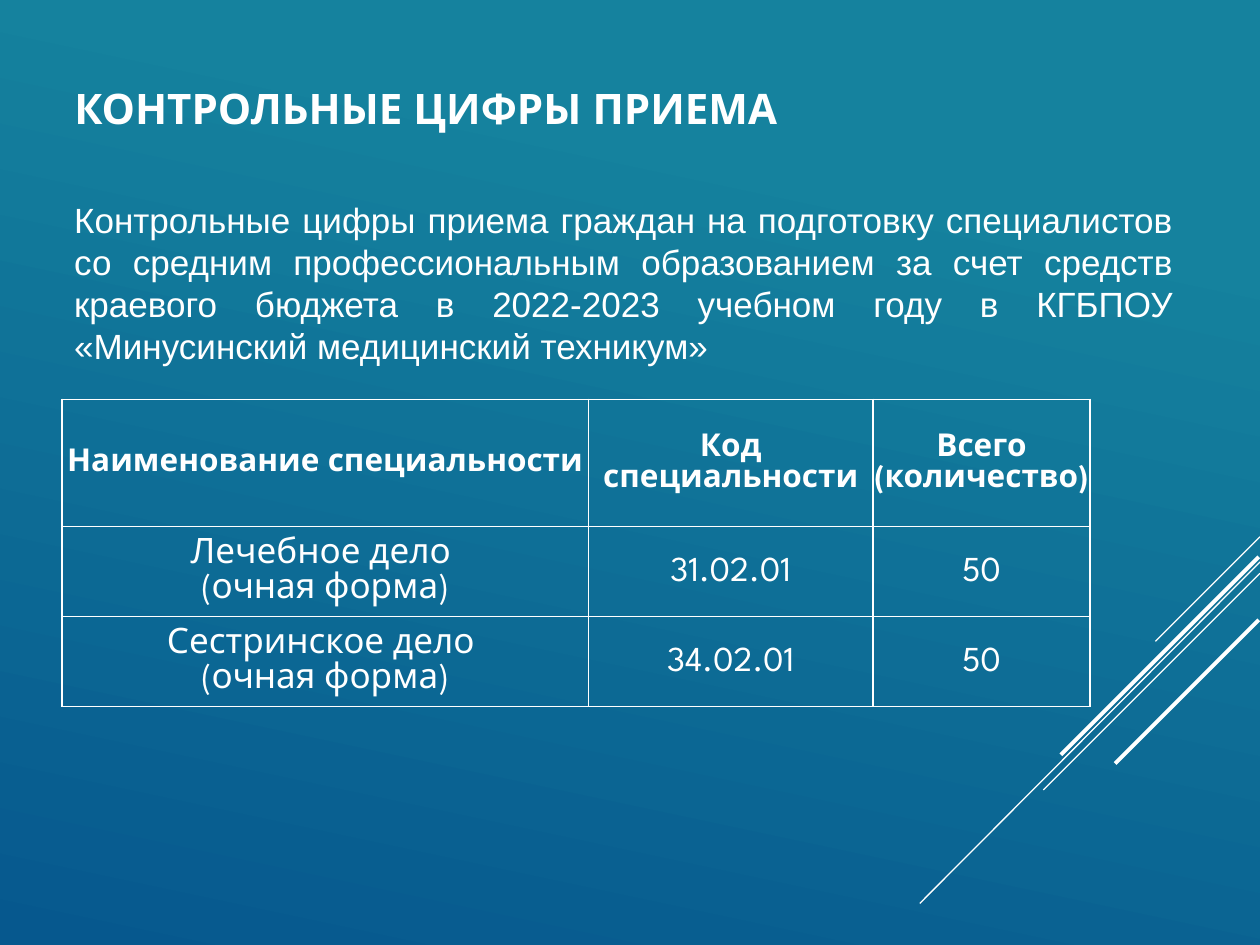
from lxml.etree import SubElement
from pptx import Presentation
from pptx.dml.color import RGBColor
from pptx.enum.shapes import MSO_CONNECTOR
from pptx.enum.text import MSO_ANCHOR, MSO_AUTO_SIZE, PP_ALIGN
from pptx.oxml.ns import qn
from pptx.util import Inches, Pt


def color(value):
    return RGBColor.from_string(value)


class SlideBuilder:
    ink = "FFFFFF"
    heading_font = "League Spartan"
    body_font = "Arial"

    def __init__(self, page):
        self.page = page

    def background(self, stops, angle):
        fill = self.page.background.fill
        fill.gradient()
        fill.gradient_angle = 360 - angle
        for stop, (position, value) in zip(fill.gradient_stops, stops):
            stop.position = position
            stop.color.rgb = color(value)

    def format_runs(self, para, name, size, bold=False):
        for run in para.runs:
            run.font.name = name
            run.font.size = Pt(size)
            run.font.bold = bold
            run.font.color.rgb = color(self.ink)

    def title(self, text, left, top, width, height):
        box = self.page.shapes.title
        box.left, box.top = Inches(left), Inches(top)
        box.width, box.height = Inches(width), Inches(height)
        frame = box.text_frame
        frame.text = text
        frame.auto_size = MSO_AUTO_SIZE.NONE
        frame.vertical_anchor = MSO_ANCHOR.MIDDLE
        para = frame.paragraphs[0]
        para.alignment = PP_ALIGN.LEFT
        self.format_runs(para, self.heading_font, 24, True)

    def text(self, text, left, top, width, height):
        box = self.page.shapes.add_textbox(
            Inches(left), Inches(top), Inches(width), Inches(height))
        frame = box.text_frame
        frame.word_wrap = True
        frame.auto_size = MSO_AUTO_SIZE.SHAPE_TO_FIT_TEXT
        frame.text = text
        para = frame.paragraphs[0]
        para.alignment = PP_ALIGN.JUSTIFY
        self.format_runs(para, self.body_font, 20)

    def line(self, start, end, weight):
        points = [Inches(value) for value in (*start, *end)]
        connector = self.page.shapes.add_connector(MSO_CONNECTOR.STRAIGHT, *points)
        connector.line.color.rgb = color(self.ink)
        connector.line.width = Pt(weight)
        SubElement(connector._element.spPr, qn("a:effectLst"))

    def cell_borders(self, cell):
        properties = cell._tc.get_or_add_tcPr()
        for side in ("lnL", "lnR", "lnT", "lnB"):
            border = SubElement(properties, qn(f"a:{side}"), w=str(Pt(1)))
            fill = SubElement(border, qn("a:solidFill"))
            SubElement(fill, qn("a:srgbClr"), val=self.ink)

    def cell(self, cell, text, heading):
        self.cell_borders(cell)
        cell.fill.background()
        cell.margin_left = cell.margin_right = 0
        cell.margin_top = cell.margin_bottom = 0
        cell.vertical_anchor = MSO_ANCHOR.MIDDLE
        para = cell.text_frame.paragraphs[0]
        para.text = text
        para.alignment = PP_ALIGN.CENTER
        para.line_spacing = 1.07
        if not heading:
            para.space_before = para.space_after = Pt(10)
        self.format_runs(para, self.heading_font, 18 if heading else 20, heading)

    def table(self, rows, left, top, widths, heights):
        frame = self.page.shapes.add_table(
            len(rows), len(widths), Inches(left), Inches(top),
            Inches(sum(widths)), Inches(sum(heights)))
        table = frame.table
        table.horz_banding = False
        for column, width in zip(table.columns, widths):
            column.width = Inches(width)
        for row_index, (texts, height) in enumerate(zip(rows, heights)):
            table.rows[row_index].height = Inches(height)
            for column_index, text in enumerate(texts):
                self.cell(table.cell(row_index, column_index), text, row_index == 0)


def main():
    deck = Presentation()
    deck.slide_width, deck.slide_height = Inches(10), Inches(7.5)
    builder = SlideBuilder(deck.slides.add_slide(deck.slide_layouts[5]))
    builder.background([(0.21, "15829E"), (1, "06588E")], 102)

    for start, end, weight in (
        ((10, 4.26), (9.17, 5.09), 0.75),
        ((10, 4.46), (7.3, 7.17), 0.75),
        ((10, 4.55), (8.28, 6.27), 0.75),
        ((9.99, 4.42), (8.42, 5.99), 2.25),
        ((9.99, 4.92), (8.85, 6.06), 2.25),
    ):
        builder.line(start, end, weight)

    builder.title("КОНТРОЛЬНЫЕ ЦИФРЫ ПРИЕМА", 0.49, 0.54, 7.17, 0.63)
    builder.text(
        "Контрольные цифры приема граждан на подготовку специалистов "
        "со средним профессиональным образованием за счет средств "
        "краевого бюджета в 2022-2023 учебном году в КГБПОУ "
        "«Минусинский медицинский техникум»",
        0.49, 1.53, 8.92, 2.04)
    builder.table(
        [
            ("Наименование специальности", "Код специальности", "Всего\n(количество)"),
            ("Лечебное дело \n(очная форма)", "31.02.01", "50"),
            ("Сестринское дело \n(очная форма)", "34.02.01", "50"),
        ],
        0.49, 3.17, (4.18, 2.26, 1.72), (1.01, 0.57, 0.57))
    deck.save("out.pptx")


if __name__ == "__main__":
    main()
